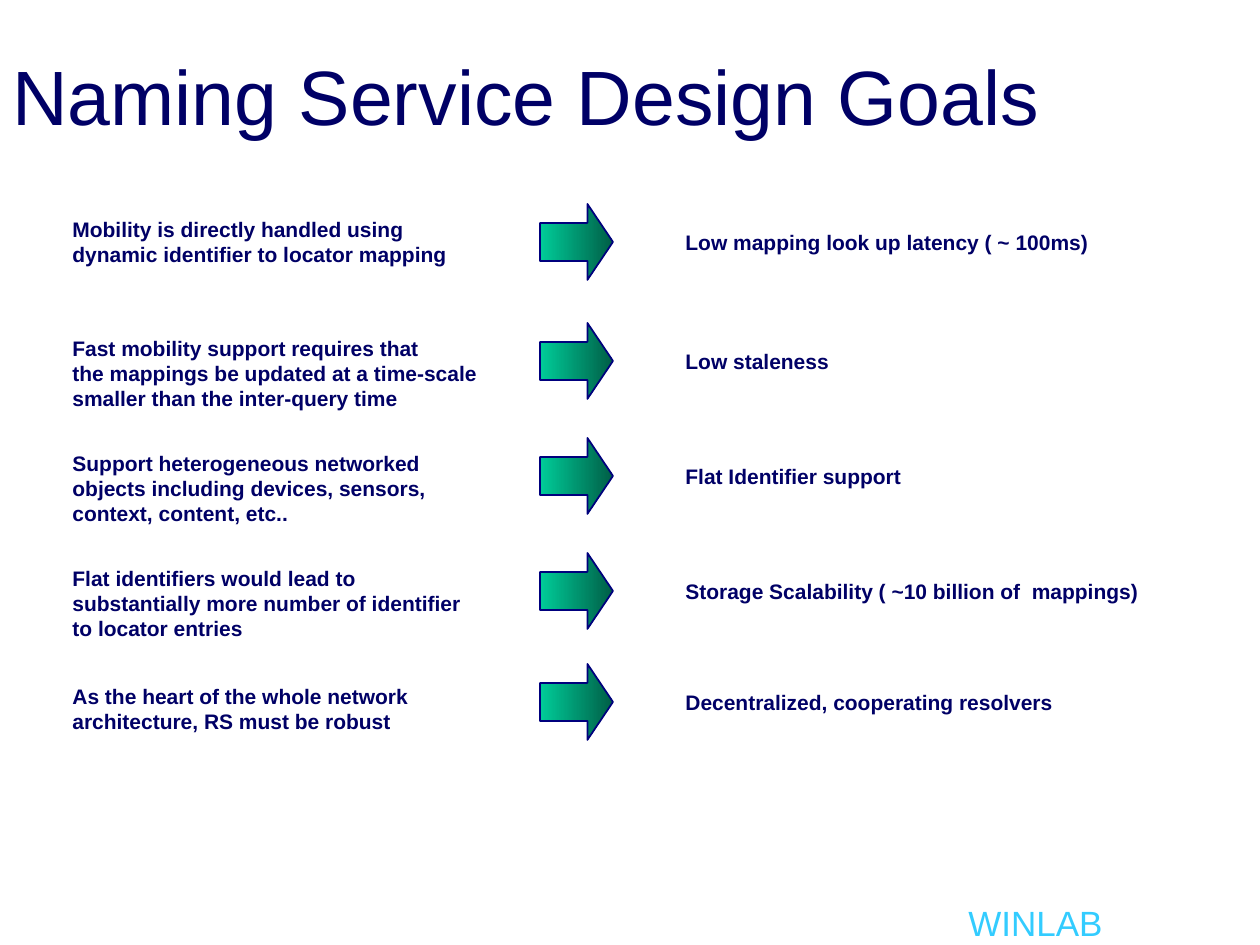
from pptx import Presentation
from pptx.dml.color import RGBColor
from pptx.enum.shapes import MSO_SHAPE
from pptx.enum.text import MSO_ANCHOR, MSO_AUTO_SIZE
from pptx.util import Emu, Pt

RIGHT_ARROW = MSO_SHAPE.RIGHT_ARROW
MIDDLE = MSO_ANCHOR.MIDDLE
TOP = MSO_ANCHOR.TOP
GROW = MSO_AUTO_SIZE.SHAPE_TO_FIT_TEXT
FIXED = MSO_AUTO_SIZE.NONE

NAVY = RGBColor(0x00, 0x00, 0x66)
OUTLINE = RGBColor(0x00, 0x00, 0x7D)
SKY = RGBColor(0x33, 0xCC, 0xFF)
ARROW_COLOURS = (RGBColor(0x00, 0xCC, 0x99), RGBColor(0x00, 0x5E, 0x46))

TITLE = "Naming Service Design Goals"
LAB = "WINLAB"
# arrow top, need offset, need width, need height, need, goal
GOALS = [
    (204, 6, 426, 63,
     "Mobility is directly handled using\ndynamic identifier to locator mapping",
     "Low mapping look up latency ( ~ 100ms)"),
    (323, 6, 442, 89,
     "Fast mobility support requires that\n"
     "the mappings be updated at a time-scale\nsmaller than the inter-query time",
     "Low staleness"),
    (438, 6, 426, 89,
     "Support heterogeneous networked objects including devices, sensors, "
     "context, content, etc..",
     "Flat Identifier support"),
    (553, 6, 426, 89,
     "Flat identifiers would lead to\n"
     "substantially more number of identifier to locator entries",
     "Storage Scalability ( ~10 billion of  mappings)"),
    (664, 13, 426, 63,
     "As the heart of the whole network architecture, RS must be robust",
     "Decentralized, cooperating resolvers"),
]

BODY_FONT = {"name": "Arial", "size": Pt(12), "bold": True}
TITLE_FONT = {"name": "Arial", "size": Pt(44)}
LAB_FONT = {"name": "Arial", "size": Pt(20)}

PX = 914400 // 126
NEED_LEFT, ARROW_LEFT, GOAL_LEFT = 60, 540, 673
ARROW_WIDTH, ARROW_HEIGHT = 73, 76
GOAL_OFFSET, GOAL_WIDTH, GOAL_HEIGHT = 19, 486, 38


def px(*lengths):
    return [Emu(length * PX) for length in lengths]


def add_text(slide, place, wording, font, colour=NAVY, anchor=TOP, fit=GROW):
    frame = slide.shapes.add_textbox(*px(*place)).text_frame
    frame.text = wording
    frame.word_wrap = True
    frame.auto_size = fit
    frame.vertical_anchor = anchor
    for paragraph in frame.paragraphs:
        for attribute, value in font.items():
            setattr(paragraph.font, attribute, value)
        paragraph.font.color.rgb = colour


def add_arrow(slide, top):
    arrow = slide.shapes.add_shape(
        RIGHT_ARROW, *px(ARROW_LEFT, top, ARROW_WIDTH, ARROW_HEIGHT))
    arrow.adjustments[0] = 0.5
    arrow.adjustments[1] = 0.35
    arrow.shadow.inherit = False
    arrow.fill.gradient()
    arrow.fill.gradient_angle = 0
    for stop, colour in zip(arrow.fill.gradient_stops, ARROW_COLOURS):
        stop.color.rgb = colour
    arrow.line.color.rgb = OUTLINE
    arrow.line.width = Pt(1)


def main():
    deck = Presentation()
    deck.slide_width, deck.slide_height = px(1260, 945)
    slide = deck.slides.add_slide(deck.slide_layouts[6])

    add_text(slide, (956, 895, 164, 54), LAB, LAB_FONT, SKY)
    add_text(slide, (0, 0, 1134, 189), TITLE, TITLE_FONT, anchor=MIDDLE, fit=FIXED)
    for top, offset, width, height, need, goal in GOALS:
        add_arrow(slide, top)
        add_text(slide, (NEED_LEFT, top + offset, width, height), need, BODY_FONT)
        add_text(slide, (GOAL_LEFT, top + GOAL_OFFSET, GOAL_WIDTH, GOAL_HEIGHT),
                 goal, BODY_FONT)

    deck.save("out.pptx")


if __name__ == "__main__":
    main()
